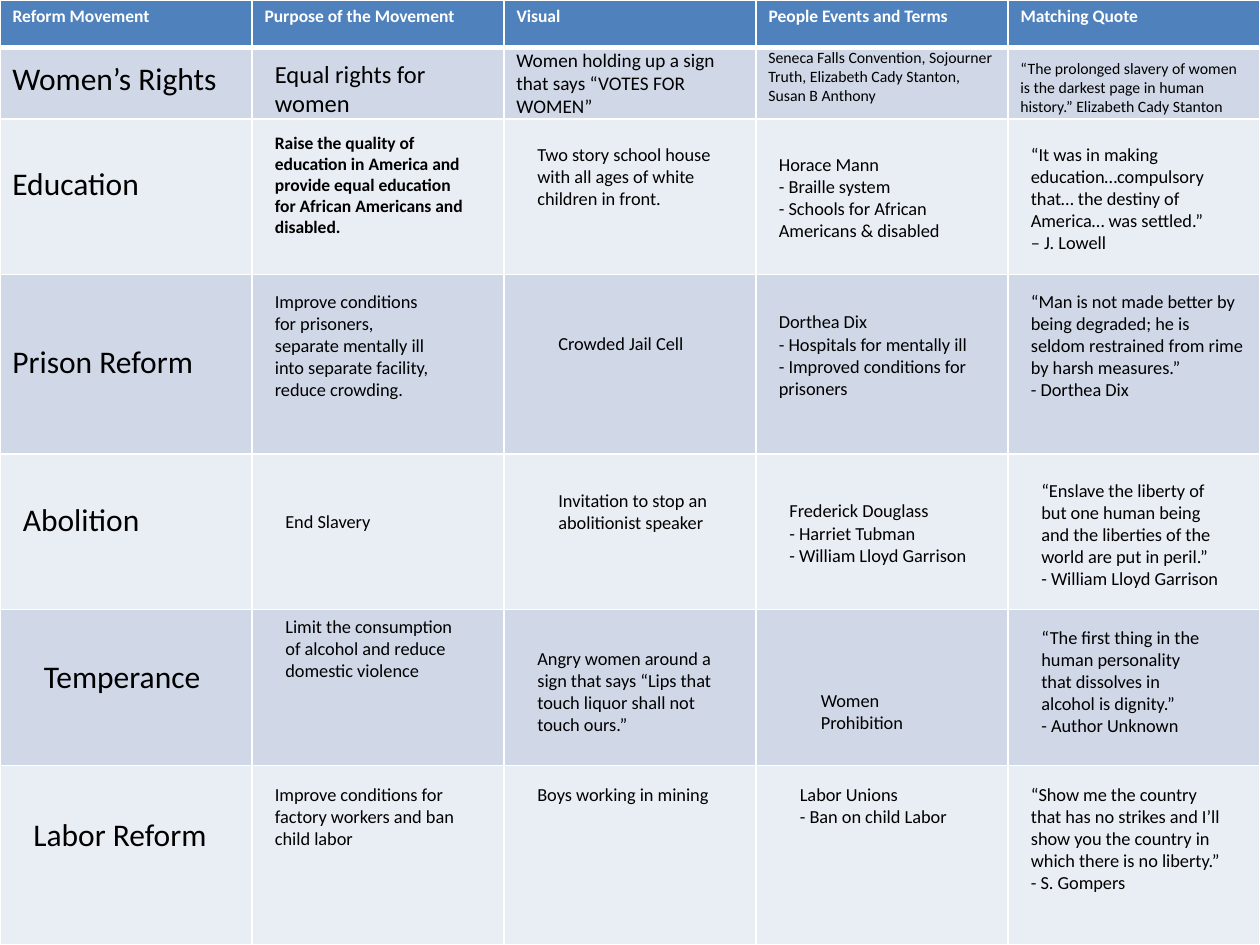
"""Build a one-slide table of American reform movements with a text box over each cell."""
import pptx
import pptx.dml.color
import pptx.enum.text
import pptx.oxml
import pptx.oxml.ns
import pptx.util

Pt = pptx.util.Pt
THEME = {
    "font": "Calibri",
    "header": "4F81BD", "odd": "D0D8E8", "even": "E9EDF4",
    "light": "FFFFFF", "dark": "000000",
    "movement": 18, "lead": 14, "visual": 11, "body": 10.5, "heading": 10, "small": 9,
}
HEADINGS = ["Reform Movement", "Purpose of the Movement", "Visual",
            "People Events and Terms", "Matching Quote"]
ROW_HEIGHTS = [27, 41, 89, 102.5, 89, 89, 102.5]
COLUMN_WIDTH = 144
INSET = 7.2

WRAPPED_NOTES = [
    (150, 30, 138, 41, "lead", ["Equal rights for women"]),
    (288, 24, 138, 47.5, "visual", ["Women holding up a sign that says “VOTES FOR WOMEN”"]),
    (432, 24, 144, 40, "small",
     ["Seneca Falls Convention, Sojourner Truth, Elizabeth Cady Stanton, Susan B Anthony"]),
    (576, 30, 144, 40, "small",
     ["“The prolonged slavery of women is the darkest page in human history.” Elizabeth Cady Stanton"]),
    (150, 72, 126, 90, "heading",
     ["Raise the quality of education in America and provide equal education for African Americans and disabled."]),
    (300, 78, 114, 58, "body",
     ["Two story school house with all ages of white children in front."]),
    (438, 84, 126, 70.5, "body",
     ["Horace Mann", "- Braille system", "- Schools for African Americans & disabled"]),
    (582, 78, 124.5, 70.5, "body",
     ["“It was in making education…compulsory that… the destiny of America… was settled.”",
      "– J. Lowell"]),
    (150, 162, 108, 83.5, "body",
     ["Improve conditions for prisoners, separate mentally ill into separate facility, reduce crowding."]),
    (438, 174, 124, 58, "body",
     ["Dorthea Dix", "- Hospitals for mentally ill", "- Improved conditions for prisoners"]),
    (582, 162, 138, 70.5, "body",
     ["“Man is not made better by being degraded; he is seldom restrained from rime by harsh measures.”",
      "- Dorthea Dix"]),
    (312, 276, 110, 32.5, "body", ["Invitation to stop an abolitionist speaker"]),
    (588, 270, 121.5, 70.5, "body",
     ["“Enslave the liberty of but one human being and the liberties of the world are put in peril.”",
      "- William Lloyd Garrison"]),
    (156, 348, 120, 58, "body",
     ["Limit the consumption of alcohol and reduce domestic violence"]),
    (300, 366, 126, 58, "body",
     ["Angry women around a sign that says “Lips that touch liquor shall not touch ours.”"]),
    (588, 354, 112.5, 70.5, "body",
     ["“The first thing in the human personality that dissolves in alcohol is dignity.”",
      "- Author Unknown"]),
    (150, 444, 134.5, 45, "body",
     ["Improve conditions for factory workers and ban child labor"]),
    (582, 444, 123, 70.5, "body",
     ["“Show me the country that has no strikes and I’ll show you the country in which there is no liberty.”",
      "- S. Gompers"]),
]
SINGLE_LINE_NOTES = [
    (0, 30, 132.5, 29, "movement", ["Women’s Rights"]),
    (0, 90, 88, 29, "movement", ["Education"]),
    (0, 192, 119, 29, "movement", ["Prison Reform"]),
    (6, 282, 82, 29, "movement", ["Abolition"]),
    (18, 372, 105, 29, "movement", ["Temperance"]),
    (12, 462, 114.5, 29, "movement", ["Labor Reform"]),
    (312, 186, 87, 20, "body", ["Crowded Jail Cell"]),
    (156, 288, 64, 20, "body", ["End Slavery"]),
    (444, 282, 117.5, 45, "body",
     ["Frederick Douglass", "- Harriet Tubman", "- William Lloyd Garrison"]),
    (462, 390, 62, 32.5, "body", ["Women", "Prohibition"]),
    (300, 444, 114, 32.5, "body", ["Boys working in mining"]),
    (450, 444, 100, 32.5, "body", ["Labor Unions", "- Ban on child Labor"]),
]


def write(para, text, size, colour, bold):
    span = para.add_run()
    span.text = text
    span.font.name = THEME["font"]
    span.font.size = Pt(THEME[size])
    span.font.bold = bold
    span.font.color.rgb = pptx.dml.color.RGBColor.from_string(THEME[colour])


def paint(cell, colour, bottom_width):
    properties = cell._tc.get_or_add_tcPr()
    for side, width in (("L", 1), ("R", 1), ("T", 1), ("B", bottom_width)):
        properties.append(pptx.oxml.parse_xml(
            f'<a:ln{side} {pptx.oxml.ns.nsdecls("a")} w="{Pt(width)}"><a:solidFill>'
            f'<a:srgbClr val="{THEME["light"]}"/></a:solidFill></a:ln{side}>'))
    cell.fill.solid()
    cell.fill.fore_color.rgb = pptx.dml.color.RGBColor.from_string(THEME[colour])


deck = pptx.Presentation()
deck.slide_width, deck.slide_height = Pt(720), Pt(540)
page = deck.slides.add_slide(deck.slide_layouts[6])

table = page.shapes.add_table(
    len(ROW_HEIGHTS), len(HEADINGS), 0, 0, Pt(720), Pt(540)).table
for column in table.columns:
    column.width = Pt(COLUMN_WIDTH)
for index, height in enumerate(ROW_HEIGHTS):
    table.rows[index].height = Pt(height)
    colour = "header" if index == 0 else ("even", "odd")[index % 2]
    for cell in table.rows[index].cells:
        paint(cell, colour, 3 if index == 0 else 1)
for cell, heading in zip(table.rows[0].cells, HEADINGS):
    write(cell.text_frame.paragraphs[0], heading, "heading", "light", True)

for notes, wrapped in ((WRAPPED_NOTES, True), (SINGLE_LINE_NOTES, False)):
    for left, top, width, height, size, lines in notes:
        box = page.shapes.add_textbox(Pt(left), Pt(top), Pt(width), Pt(height))
        frame = box.text_frame
        frame.word_wrap = wrapped
        frame.auto_size = pptx.enum.text.MSO_AUTO_SIZE.SHAPE_TO_FIT_TEXT
        frame.margin_left = frame.margin_right = Pt(INSET)
        for number, line in enumerate(lines):
            para = frame.add_paragraph() if number else frame.paragraphs[0]
            write(para, line, size, "dark", size == "heading")

deck.save("out.pptx")
